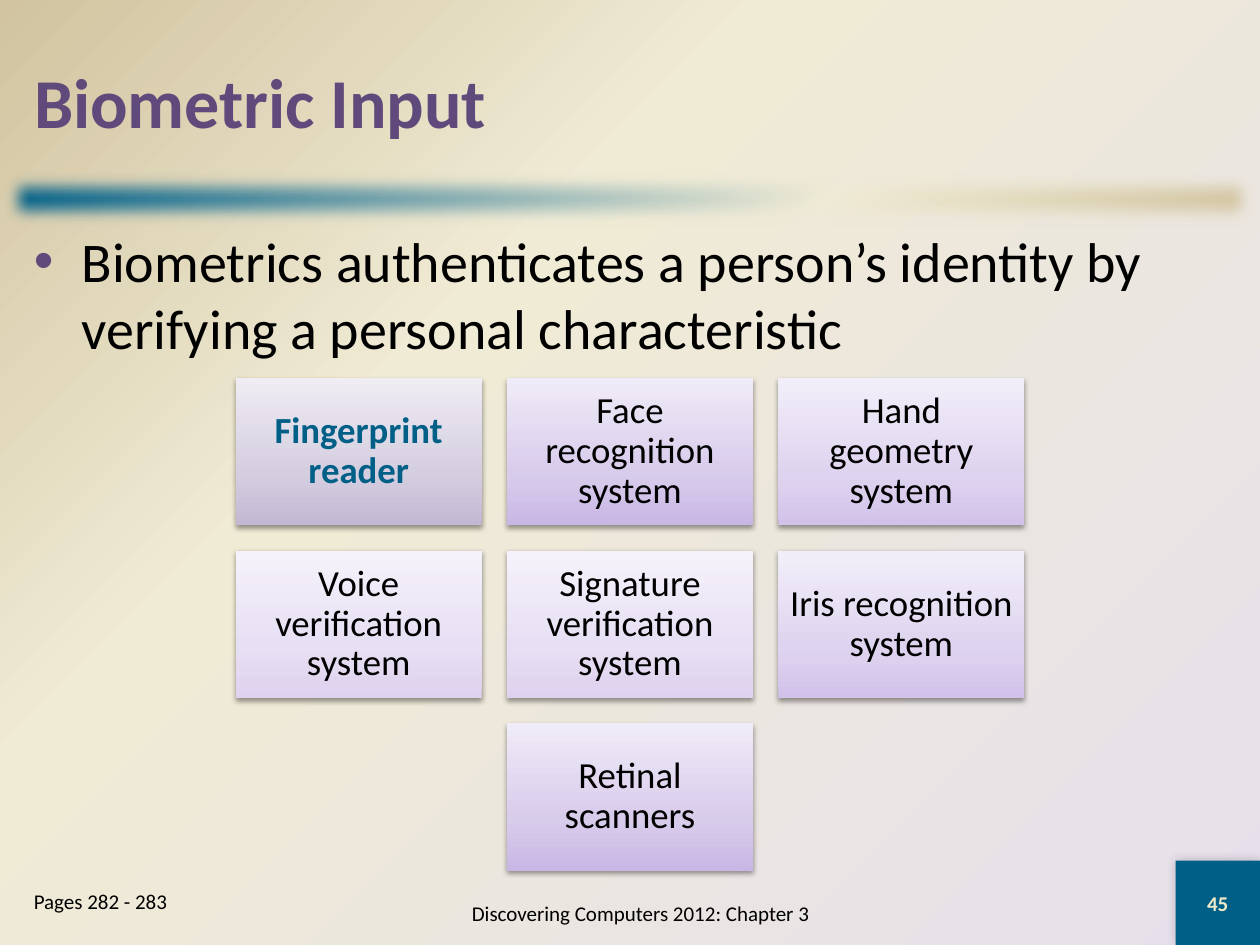
from pptx import Presentation
from pptx.dml.color import RGBColor
from pptx.enum.shapes import MSO_SHAPE
from pptx.enum.text import MSO_ANCHOR, PP_ALIGN
from pptx.oxml import parse_xml
from pptx.oxml.ns import nsdecls, qn
from pptx.util import Inches, Pt

RECTANGLE = MSO_SHAPE.RECTANGLE
TOP, MIDDLE = MSO_ANCHOR.TOP, MSO_ANCHOR.MIDDLE
LEFT, CENTER = PP_ALIGN.LEFT, PP_ALIGN.CENTER

BLACK = RGBColor(0x00, 0x00, 0x00)
TEAL = RGBColor(0x00, 0x5F, 0x86)
PURPLE = RGBColor(0x60, 0x4A, 0x7B)
CREAM = RGBColor(0xEE, 0xEB, 0xCA)
SAND = RGBColor(0xF0, 0xEB, 0xD5)
TAN = RGBColor(0xD1, 0xC3, 0x9F)
MIST = RGBColor(0xE6, 0xE0, 0xEC)

GREY_TILE = (RGBColor(0xC3, 0xB8, 0xD4), RGBColor(0xD5, 0xCE, 0xE0), RGBColor(0xEF, 0xEC, 0xF3))
DEEP_TILE = (RGBColor(0xC8, 0xB7, 0xE4), RGBColor(0xD8, 0xCC, 0xEB), RGBColor(0xF0, 0xEB, 0xF8))
MEDIUM_TILE = (RGBColor(0xD2, 0xC2, 0xEA), RGBColor(0xDF, 0xD4, 0xEF), RGBColor(0xF2, 0xEE, 0xF9))
PALE_TILE = (RGBColor(0xDE, 0xD2, 0xEF), RGBColor(0xE7, 0xDF, 0xF3), RGBColor(0xF5, 0xF2, 0xFB))

BIOMETRIC_DEVICES = [
    ("Fingerprint reader", GREY_TILE),
    ("Face recognition system", DEEP_TILE),
    ("Hand geometry system", MEDIUM_TILE),
    ("Voice verification system", PALE_TILE),
    ("Signature verification system", PALE_TILE),
    ("Iris recognition system", MEDIUM_TILE),
    ("Retinal scanners", DEEP_TILE),
]


def set_gradient(fill, owner, colors, middle, direction):
    """Fill with three colours, the second at the given percentage."""
    fill.gradient()
    stops = "".join(
        f'<a:gs pos="{position * 1000}"><a:srgbClr val="{color}"/></a:gs>'
        for position, color in zip((0, middle, 100), colors))
    current = next(owner.iter(qn("a:gradFill")))
    current.getparent().replace(current, parse_xml(
        f'<a:gradFill {nsdecls("a")} rotWithShape="1"><a:gsLst>{stops}</a:gsLst>{direction}</a:gradFill>'))


def linear(angle):
    """Return the gradient direction for an angle in degrees."""
    return f'<a:lin ang="{angle * 60000}" scaled="0"/>'


def set_effect(shape, effect):
    """Give a shape a single effect."""
    shape.shadow.inherit = False
    shape.element.spPr.find(qn("a:effectLst")).append(parse_xml(effect))


def outer_shadow(opacity, blur, distance, angle):
    """Return a black shadow, with lengths in points."""
    return (f'<a:outerShdw {nsdecls("a")} blurRad="{Pt(blur)}" dist="{Pt(distance)}" '
            f'dir="{angle * 60000}" rotWithShape="0"><a:srgbClr val="{BLACK}">'
            f'<a:alpha val="{opacity * 1000}"/></a:srgbClr></a:outerShdw>')


def write(shape, text, size, color=BLACK, bold=False, align=LEFT, anchor=TOP):
    """Write one formatted paragraph and return it."""
    frame = shape.text_frame
    frame.word_wrap = True
    frame.vertical_anchor = anchor
    frame.text = text
    paragraph = frame.paragraphs[0]
    paragraph.alignment = align
    font = paragraph.runs[0].font
    font.name, font.size, font.bold = "Calibri", Pt(size), bold
    font.color.rgb = color
    return paragraph


def add_rectangle(slide, box):
    """Add a rectangle without an outline."""
    rectangle = slide.shapes.add_shape(RECTANGLE, *box)
    rectangle.line.fill.background()
    return rectangle


def add_background(slide):
    """Spread the background gradient from the bottom right corner."""
    set_gradient(slide.background.fill, slide.element, (MIST, SAND, TAN), 65,
                 '<a:path path="circle"><a:fillToRect l="100000" t="100000"/></a:path>')


def add_heading(slide, title_box, divider_box):
    """Place the title and the soft divider beneath it."""
    divider = add_rectangle(slide, divider_box)
    set_gradient(divider.fill, divider.element, (TEAL, SAND, TAN), 65, linear(45))
    set_effect(divider, f'<a:softEdge {nsdecls("a")} rad="{Pt(10)}"/>')
    title = slide.shapes.title
    title.left, title.top, title.width, title.height = title_box
    write(title, "Biometric Input", 40, PURPLE, True, anchor=MIDDLE)


def add_definition(slide, box):
    """Place the bulleted definition."""
    definition = slide.shapes.add_textbox(*box)
    paragraph = write(
        definition, "Biometrics authenticates a person’s identity by verifying a personal characteristic", 32)
    properties = paragraph._p.get_or_add_pPr()
    properties.set("marL", str(Inches(0.38)))
    properties.set("indent", str(Inches(-0.38)))
    for bullet in (f'<a:buClr {nsdecls("a")}><a:srgbClr val="{PURPLE}"/></a:buClr>',
                   f'<a:buFont {nsdecls("a")} typeface="Arial"/>',
                   f'<a:buChar {nsdecls("a")} char="•"/>'):
        properties.append(parse_xml(bullet))


def add_device_grid(slide, left, top, width, height):
    """Lay the devices out in rows of three, with a short last row centred."""
    columns, gap = 3, Inches(0.2)
    tile_width = (width - (columns - 1) * gap) // columns
    row_count = -(-len(BIOMETRIC_DEVICES) // columns)
    tile_height = (height - (row_count - 1) * gap) // row_count
    for row in range(row_count):
        devices = BIOMETRIC_DEVICES[row * columns:(row + 1) * columns]
        indent = (columns - len(devices)) * (tile_width + gap) // 2
        for column, (device, colors) in enumerate(devices):
            tile = add_rectangle(slide, (left + indent + column * (tile_width + gap),
                                         top + row * (tile_height + gap), tile_width, tile_height))
            set_gradient(tile.fill, tile.element, colors, 35, linear(270))
            set_effect(tile, outer_shadow(38, 3.1, 1.6, 90))
            highlighted = colors is GREY_TILE
            paragraph = write(tile, device, 21, TEAL if highlighted else BLACK, highlighted, CENTER, MIDDLE)
            paragraph.line_spacing = 0.9
            frame = tile.text_frame
            frame.margin_left = frame.margin_right = Inches(0.09)
            frame.margin_top = frame.margin_bottom = Inches(0.09)


def add_footer(slide, pages_box, source_box, number_box):
    """Place the page range, the source and the slide number."""
    number = add_rectangle(slide, number_box)
    number.fill.solid()
    number.fill.fore_color.rgb = TEAL
    set_effect(number, outer_shadow(20, 6, 0, 225))
    write(number, "45", 12, CREAM, True, CENTER, MIDDLE)
    write(slide.shapes.add_textbox(*source_box), "Discovering Computers 2012: Chapter 3", 12,
          align=CENTER, anchor=MIDDLE)
    write(slide.shapes.add_textbox(*pages_box), "Pages 282 - 283", 12)


def main():
    """Build and save the slide."""
    presentation = Presentation()
    presentation.slide_width, presentation.slide_height = Inches(10), Inches(7.5)
    slide = presentation.slides.add_slide(presentation.slide_layouts[5])
    add_background(slide)
    add_heading(slide, (Inches(0.17), Inches(0.17), Inches(9.67), Inches(1.25)),
                (Inches(0), Inches(1.33), Inches(10), Inches(0.5)))
    add_definition(slide, (Inches(0.17), Inches(1.75), Inches(9.67), Inches(1.2)))
    add_device_grid(slide, Inches(1.87), Inches(3), Inches(6.26), Inches(3.91))
    add_footer(slide, (Inches(0.17), Inches(7), Inches(1.83), Inches(0.5)),
               (Inches(3), Inches(7), Inches(4.17), Inches(0.5)),
               (Inches(9.33), Inches(6.83), Inches(0.67), Inches(0.67)))
    presentation.save("out.pptx")


if __name__ == "__main__":
    main()
